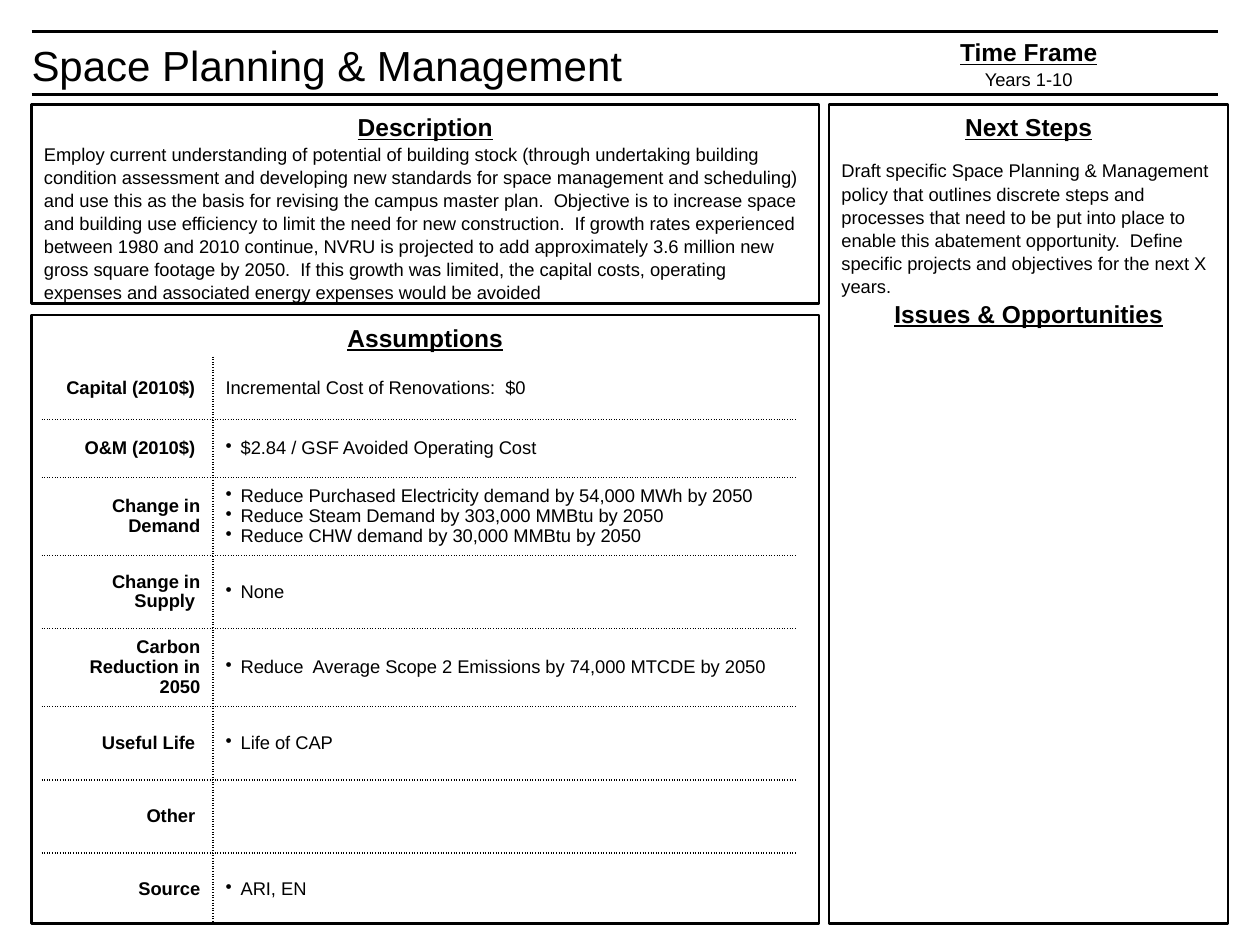
from lxml import etree
from pptx import Presentation
from pptx.dml.color import RGBColor
from pptx.enum.shapes import MSO_CONNECTOR as CONN, MSO_SHAPE as SHAPE
from pptx.enum.text import MSO_ANCHOR as ANCHOR, PP_ALIGN as ALIGN
from pptx.oxml.ns import qn
from pptx.util import Inches, Pt

BLACK = RGBColor(0x00, 0x00, 0x00)
FONT = "Arial"
BODY = 10.5
HEADING = 14
LEFT, TOP, GAP = 0.25, 0.83, 0.08
MAIN_W, SIDE_W = 6.25, 3.17
SIDE_X = LEFT + MAIN_W + GAP

DESCRIPTION = (
    "Employ current understanding of potential of building stock (through "
    "undertaking building condition assessment and developing new standards for "
    "space management and scheduling) and use this as the basis for revising the "
    "campus master plan.  Objective is to increase space and building use "
    "efficiency to limit the need for new construction.  If growth rates "
    "experienced between 1980 and 2010 continue, NVRU is projected to add "
    "approximately 3.6 million new gross square footage by 2050.  If this growth "
    "was limited, the capital costs, operating expenses and associated energy "
    "expenses would be avoided"
)
NEXT_STEPS = (
    "Draft specific Space Planning & Management policy that outlines discrete "
    "steps and processes that need to be put into place to enable this abatement "
    "opportunity.  Define specific projects and objectives for the next X years."
)
ASSUMPTIONS = [
    ("Capital (2010$) ", 0.5, ["Incremental Cost of Renovations:  $0"], False),
    ("O&M (2010$) ", 0.46, ["$2.84 / GSF Avoided Operating Cost"], True),
    ("Change in Demand", 0.62, [
        "Reduce Purchased Electricity demand by 54,000 MWh by 2050",
        "Reduce Steam Demand by 303,000 MMBtu by 2050",
        "Reduce CHW demand by 30,000 MMBtu by 2050",
    ], True),
    ("Change in Supply ", 0.58, ["None"], True),
    ("Carbon Reduction in 2050", 0.62,
     ["Reduce  Average Scope 2 Emissions by 74,000 MTCDE by 2050"], True),
    ("Useful Life ", 0.58, ["Life of CAP"], True),
    ("Other ", 0.58, [], False),
    ("Source", 0.58, ["ARI, EN"], True),
]


def add_text(tf, text, size=BODY, bold=False, underline=False,
             align=ALIGN.LEFT, spacing=1.05):
    p = tf.paragraphs[0]
    if p.runs:
        p = tf.add_paragraph()
    p.alignment = align
    p.line_spacing = spacing
    r = p.add_run()
    r.text = text
    r.font.name = FONT
    r.font.size = Pt(size)
    r.font.bold = bold
    r.font.underline = underline
    r.font.color.rgb = BLACK
    return p


def add_heading(tf, text):
    return add_text(tf, text, HEADING, True, True, ALIGN.CENTER)


def set_title(s, text):
    sp = s.shapes.title
    sp.left, sp.top = Inches(0.15), Inches(0.24)
    sp.width, sp.height = Inches(4.94), Inches(0.5)
    tf = sp.text_frame
    tf.word_wrap = False
    tf.vertical_anchor = ANCHOR.TOP
    add_text(tf, text, 24)


def add_rule(s, y):
    line = s.shapes.add_connector(
        CONN.STRAIGHT, Inches(LEFT), Inches(y), Inches(9.67), Inches(y))
    line.line.color.rgb = BLACK
    line.line.width = Pt(1.25)
    etree.SubElement(line._element.spPr, qn("a:effectLst"))


def add_panel(s, x, y, w, h, heading):
    sp = s.shapes.add_shape(
        SHAPE.RECTANGLE, Inches(x), Inches(y), Inches(w), Inches(h))
    sp.shadow.inherit = False
    sp.fill.background()
    sp.line.color.rgb = BLACK
    sp.line.width = Pt(1.25)
    tf = sp.text_frame
    tf.word_wrap = True
    tf.vertical_anchor = ANCHOR.TOP
    add_heading(tf, heading)
    return tf


def add_time_frame(s):
    sp = s.shapes.add_textbox(
        Inches(SIDE_X), Inches(0.25), Inches(SIDE_W), Inches(0.5))
    tf = sp.text_frame
    tf.word_wrap = True
    tf.vertical_anchor = ANCHOR.MIDDLE
    add_heading(tf, "Time Frame")
    add_text(tf, "Years 1-10", align=ALIGN.CENTER)


def set_bullet(p):
    pPr = p._p.get_or_add_pPr()
    pPr.set("marL", str(Inches(0.12)))
    pPr.set("indent", str(-Inches(0.12)))
    etree.SubElement(pPr, qn("a:buChar"), char="•")


def set_borders(cell, dotted):
    tcPr = cell._tc.get_or_add_tcPr()
    for i, side in enumerate(("lnL", "lnR", "lnT", "lnB")):
        ln = etree.Element(qn(f"a:{side}"), w=str(Pt(1)))
        if side in dotted:
            fill = etree.SubElement(ln, qn("a:solidFill"))
            etree.SubElement(fill, qn("a:srgbClr"), val=str(BLACK))
            etree.SubElement(ln, qn("a:prstDash"), val="sysDot")
        else:
            etree.SubElement(ln, qn("a:noFill"))
        tcPr.insert(i, ln)


def add_assumptions(s):
    last = len(ASSUMPTIONS) - 1
    height = sum(row[1] for row in ASSUMPTIONS)
    table = s.shapes.add_table(
        last + 1, 2, Inches(0.33), Inches(2.83), Inches(6), Inches(height)).table
    table.first_row = table.horz_banding = False
    for col, width in zip(table.columns, (1.36, 4.64)):
        col.width = Inches(width)
    for i, (label, row_h, lines, bulleted) in enumerate(ASSUMPTIONS):
        table.rows[i].height = Inches(row_h)
        name, value = table.cell(i, 0), table.cell(i, 1)
        add_text(name.text_frame, label, bold=True, align=ALIGN.RIGHT, spacing=0.97)
        for text in lines:
            p = add_text(value.text_frame, text, spacing=0.97)
            if bulleted:
                set_bullet(p)
        across = {side for side, on in (("lnT", i > 0), ("lnB", i < last)) if on}
        for cell, inner in ((name, "lnR"), (value, "lnL")):
            cell.vertical_anchor = ANCHOR.MIDDLE
            cell.fill.background()
            set_borders(cell, across | {inner})


def main():
    prs = Presentation()
    prs.slide_width, prs.slide_height = Inches(10), Inches(7.5)
    s = prs.slides.add_slide(prs.slide_layouts[5])
    set_title(s, "Space Planning & Management")
    for y in (0.25, 0.75):
        add_rule(s, y)
    tf = add_panel(s, LEFT, TOP, MAIN_W, 1.58, "Description")
    add_text(tf, DESCRIPTION)
    add_panel(s, LEFT, 2.5, MAIN_W, 4.83, "Assumptions")
    add_time_frame(s)
    tf = add_panel(s, SIDE_X, TOP, SIDE_W, 6.5, "Next Steps")
    add_text(tf, NEXT_STEPS).space_before = Pt(9.7)
    add_heading(tf, "Issues & Opportunities")
    add_assumptions(s)
    prs.save("out.pptx")


if __name__ == "__main__":
    main()
